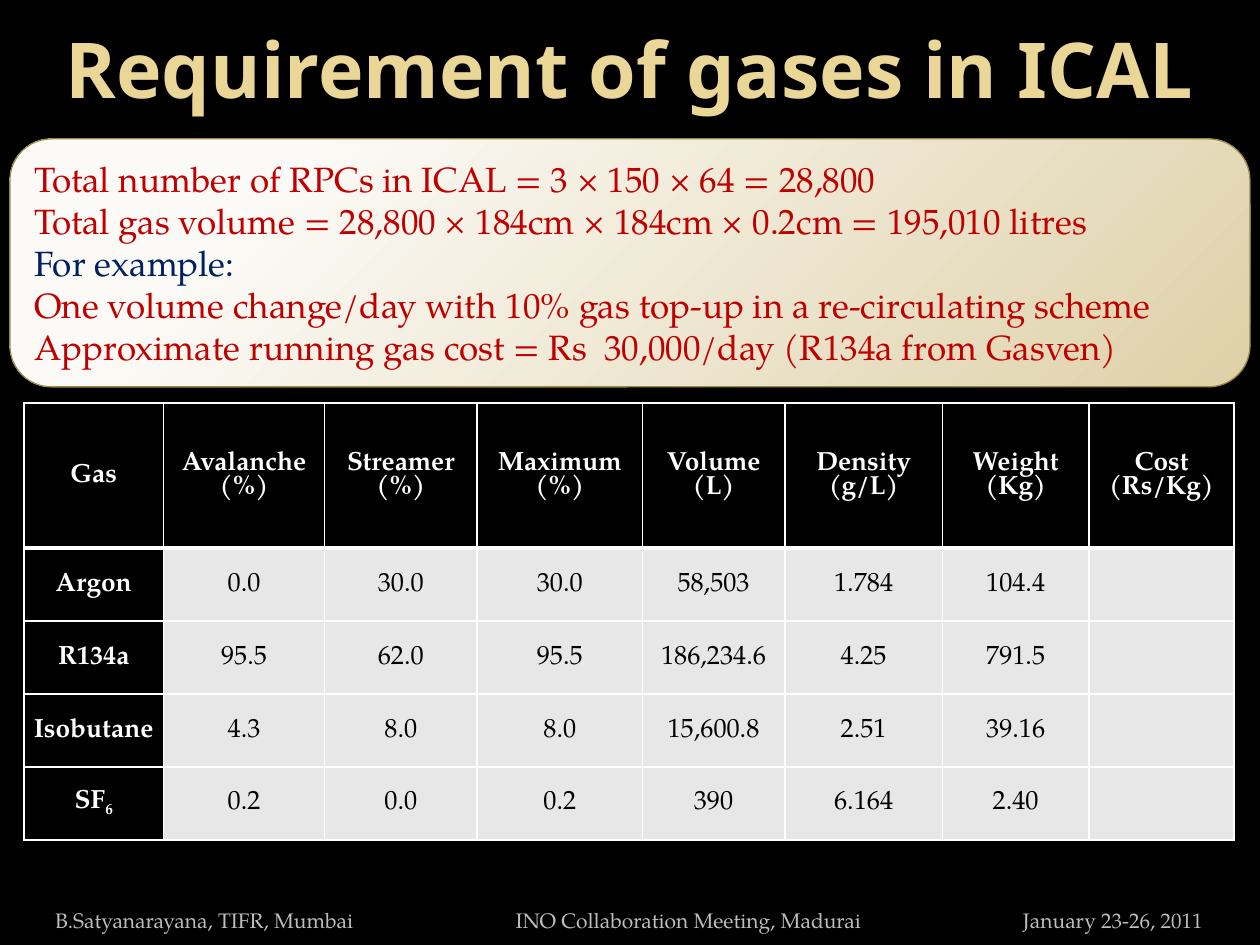
from lxml import etree
from pptx import Presentation
from pptx import util as u
from pptx.dml.color import RGBColor
from pptx.enum import shapes, text
from pptx.oxml import parse_xml
from pptx.oxml.ns import qn

A_NS = "http://schemas.openxmlformats.org/drawingml/2006/main"
COLORS = {
    "black": "000000", "white": "FFFFFF", "gold": "EAD696", "grey": "BDBDBD",
    "cell": "E7E7E7", "red": "C00000", "navy": "002060", "edge": "998946",
    "cream": "FBFAF6", "sand": "DED1A8",
}


def rgb(name):
    return RGBColor.from_string(COLORS[name])


class SlideBuilder:
    body_font = "TeX Gyre Pagella"
    title_font = "Noto Sans"

    def __init__(self, prs):
        self.slide = prs.slides.add_slide(prs.slide_layouts[5])
        fill = self.slide.background.fill
        fill.solid()
        fill.fore_color.rgb = rgb("black")

    def run(self, p, words, size, color, bold=False, font=None):
        r = p.add_run()
        r.text = words
        r.font.name = font or self.body_font
        r.font.size = u.Pt(size)
        r.font.bold = bold
        r.font.color.rgb = rgb(color)
        return r

    def title(self, words, box):
        sp = self.slide.shapes.title
        sp.left, sp.top, sp.width, sp.height = map(u.Cm, box)
        tf = sp.text_frame
        tf.vertical_anchor = text.MSO_ANCHOR.MIDDLE
        p = tf.paragraphs[0]
        p.alignment = text.PP_ALIGN.CENTER
        self.run(p, words, 44, "gold", True, self.title_font)

    def footer(self, parts, box, indent, tabs):
        tf = self.slide.shapes.add_textbox(*map(u.Cm, box)).text_frame
        tf.word_wrap = True
        tf.vertical_anchor = text.MSO_ANCHOR.BOTTOM
        tf.margin_left = u.Cm(indent)
        p = tf.paragraphs[0]
        p.alignment = text.PP_ALIGN.LEFT
        self.run(p, "\t".join(parts), 12, "grey")
        tab_list = etree.SubElement(p._p.get_or_add_pPr(), qn("a:tabLst"))
        for pos, align in tabs:
            etree.SubElement(tab_list, qn("a:tab"), pos=str(u.Cm(pos)), algn=align)

    def panel(self, lines, box):
        sp = self.slide.shapes.add_shape(
            shapes.MSO_SHAPE.ROUNDED_RECTANGLE, *map(u.Cm, box))
        sp.shadow.inherit = False
        sp.line.color.rgb = rgb("edge")
        sp.line.width = u.Pt(0.75)
        # Radial gradient centred beyond the top left corner
        sp.fill.background()
        no_fill = sp._element.spPr.find(qn("a:noFill"))
        no_fill.getparent().replace(no_fill, parse_xml(
            f'<a:gradFill xmlns:a="{A_NS}" rotWithShape="1"><a:gsLst>'
            f'<a:gs pos="20000"><a:srgbClr val="{COLORS["cream"]}"/></a:gs>'
            f'<a:gs pos="100000"><a:srgbClr val="{COLORS["sand"]}"/></a:gs>'
            '</a:gsLst><a:path path="circle"><a:fillToRect l="-15000" t="-15000" '
            'r="115000" b="115000"/></a:path></a:gradFill>'))
        tf = sp.text_frame
        tf.word_wrap = True
        tf.vertical_anchor = text.MSO_ANCHOR.MIDDLE
        for i, (words, color) in enumerate(lines):
            p = tf.add_paragraph() if i else tf.paragraphs[0]
            p.alignment = text.PP_ALIGN.LEFT
            self.run(p, words, 20, color)

    def borders(self, cell, top, bottom):
        tc_pr = cell._tc.get_or_add_tcPr()
        sides = {"lnL": 1, "lnR": 1, "lnT": top, "lnB": bottom}
        for i, (side, width) in enumerate(sides.items()):
            tc_pr.insert(i, parse_xml(
                f'<a:{side} xmlns:a="{A_NS}" w="{u.Pt(width)}"><a:solidFill>'
                f'<a:srgbClr val="{COLORS["white"]}"/></a:solidFill></a:{side}>'))

    def cell(self, cell, words, dark):
        cell.fill.solid()
        cell.fill.fore_color.rgb = rgb("black" if dark else "cell")
        cell.vertical_anchor = text.MSO_ANCHOR.MIDDLE
        cell.margin_left = cell.margin_right = u.Cm(0.18)
        cell.margin_top = cell.margin_bottom = 0
        color = "white" if dark else "black"
        tf = cell.text_frame
        for i, line in enumerate(words.split("\n")):
            p = tf.add_paragraph() if i else tf.paragraphs[0]
            p.alignment = text.PP_ALIGN.CENTER
            p.line_spacing = 0.95
            base, _, subscript = line.partition("_")
            if base:
                self.run(p, base, 15, color, dark)
            if subscript:
                r = self.run(p, subscript, 15, color, dark)
                r.font._element.set("baseline", "-25000")

    def table(self, rows, left, top, widths, heights):
        frame = self.slide.shapes.add_table(
            len(rows), len(widths), u.Cm(left), u.Cm(top),
            u.Cm(sum(widths)), u.Cm(sum(heights)))
        tbl = frame.table
        for col, width in zip(tbl.columns, widths):
            col.width = u.Cm(width)
        for row, height in zip(tbl.rows, heights):
            row.height = u.Cm(height)
        for i, values in enumerate(rows):
            for j, words in enumerate(values):
                cell = tbl.cell(i, j)
                self.cell(cell, words, dark=i == 0 or j == 0)
                self.borders(cell, top=3 if i == 1 else 1, bottom=3 if i == 0 else 1)


def main():
    prs = Presentation()
    prs.slide_width, prs.slide_height = u.Cm(25.4), u.Cm(19.05)
    s = SlideBuilder(prs)
    left, width = 0.2, 25

    # Title
    s.title("Requirement of gases in ICAL", (left, 0.11, width, 2.49))

    # Footer: left, centre and right parts on tab stops
    s.footer(["B.Satyanarayana, TIFR, Mumbai", "INO Collaboration Meeting, Madurai",
              "January 23-26, 2011"],
             (left, 18.03, width, 0.89), 0.91, [(12.77, "ctr"), (23.14, "r")])

    # Gas table
    s.table([
        ["Gas", "Avalanche\n(%)", "Streamer\n(%)", "Maximum\n(%)", "Volume\n(L)",
         "Density\n(g/L)", "Weight\n(Kg)", "Cost\n(Rs/Kg)"],
        ["Argon", "0.0", "30.0", "30.0", "58,503", "1.784", "104.4", ""],
        ["R134a", "95.5", "62.0", "95.5", "186,234.6", "4.25", "791.5", ""],
        ["Isobutane", "4.3", "8.0", "8.0", "15,600.8", "2.51", "39.16", ""],
        ["SF_6", "0.2", "0.0", "0.2", "390", "6.164", "2.40", ""],
    ], 0.48, 8.12, [2.82, 3.24, 3.08, 3.33, 2.87, 3.18, 2.95, 2.93],
        [2.93] + [1.47] * 4)

    # Summary panel
    s.panel([
        ("Total number of RPCs in ICAL = 3 × 150 × 64 = 28,800", "red"),
        ("Total gas volume = 28,800 × 184cm × 184cm × 0.2cm = 195,010 litres", "red"),
        ("For example:", "navy"),
        ("One volume change/day with 10% gas top-up in a re-circulating scheme", "red"),
        ("Approximate running gas cost = Rs  30,000/day (R134a from Gasven)", "red"),
    ], (left, 2.8, width, 5))

    prs.save("out.pptx")


if __name__ == "__main__":
    main()
